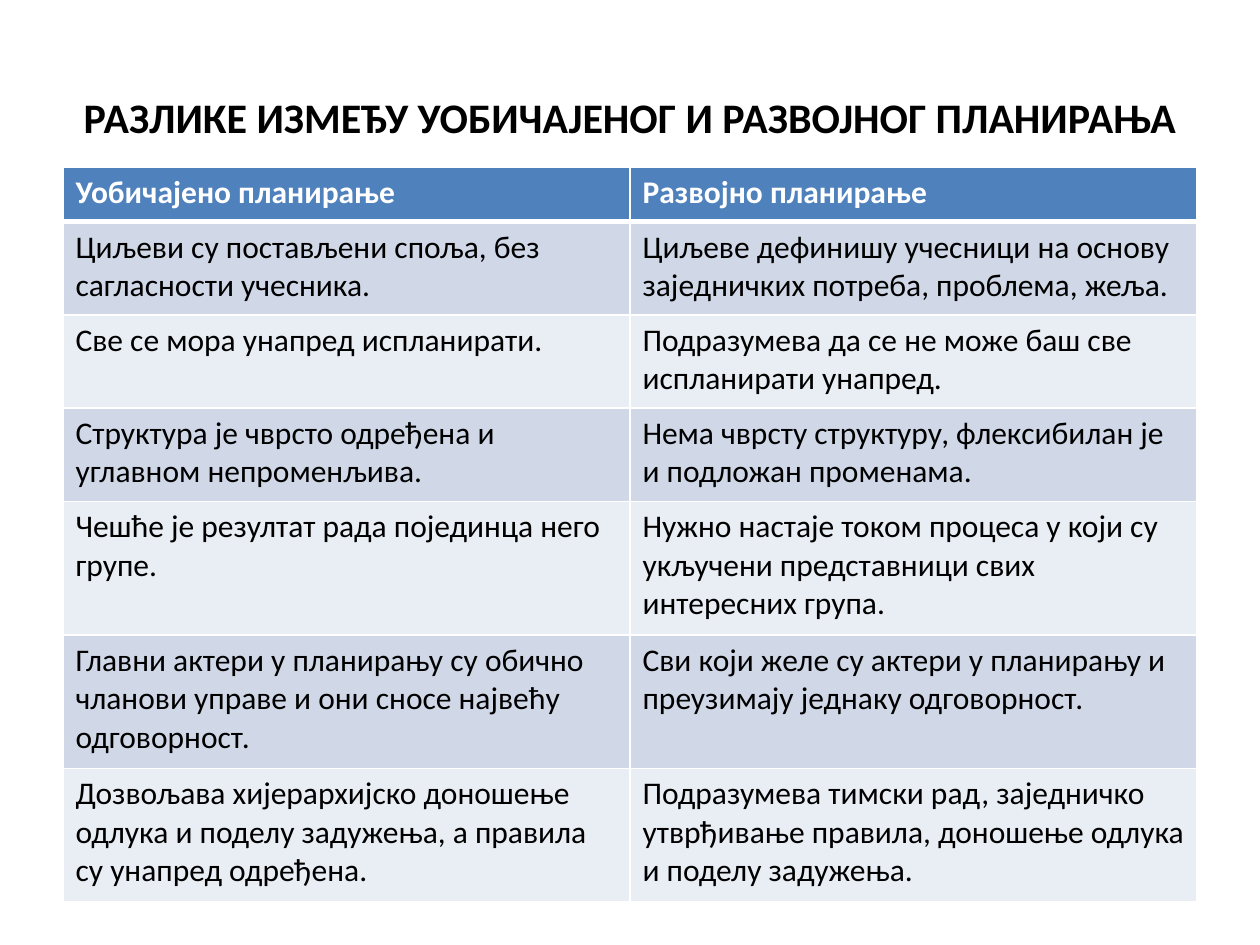
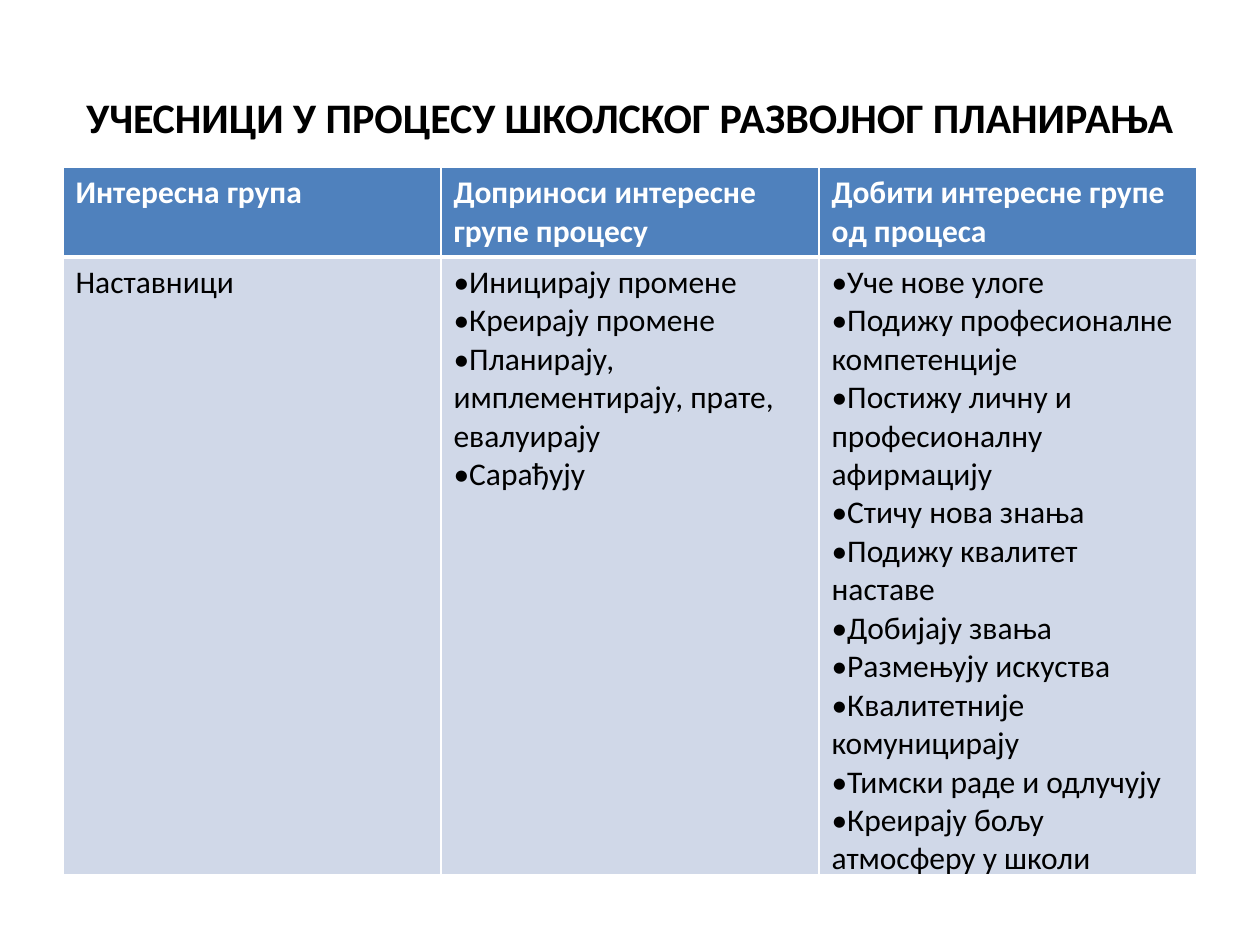
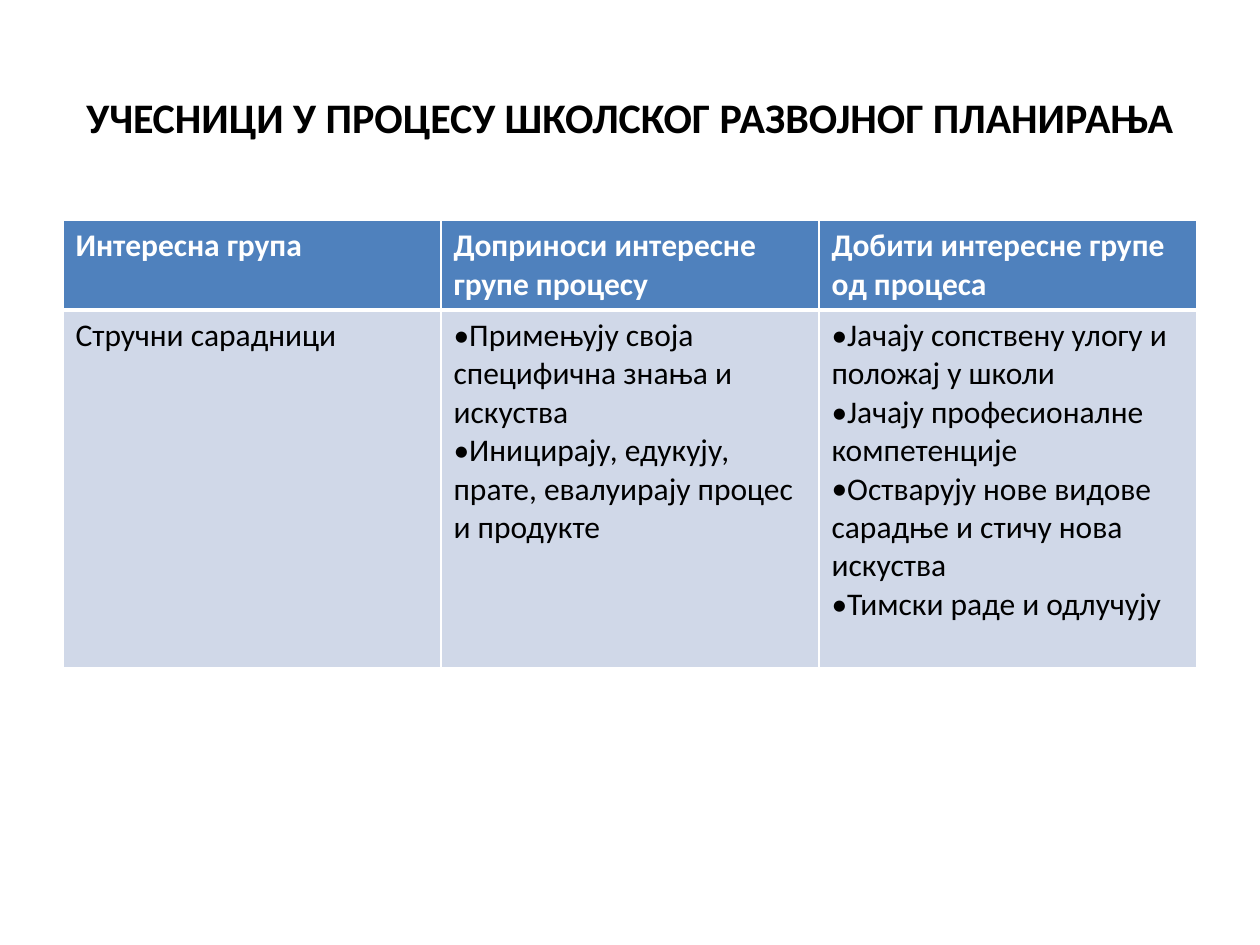
"""Build three slides that compare planning styles and list the participants."""
from dataclasses import dataclass

from lxml import etree
from pptx import Presentation, util as u
from pptx.dml.color import RGBColor
from pptx.enum import text
from pptx.oxml import ns


@dataclass(frozen=True)
class Theme:
    font: str = "Calibri"
    title_size: int = 24
    table_size: int = 18
    ink: str = "000000"
    paper: str = "FFFFFF"
    header: str = "4F81BD"
    bands: tuple = ("D0D8E8", "E9EDF4")
    thin: int = 1
    thick: int = 3


class Deck:
    def __init__(self, theme):
        self.theme = theme
        self.presentation = Presentation()
        self.presentation.slide_width = u.Inches(10)
        self.presentation.slide_height = u.Inches(7.5)
        self.slide = None

    def add_slide(self, title):
        layout = self.presentation.slide_layouts[6]
        self.slide = self.presentation.slides.add_slide(layout)
        self.add_title(title)

    def add_title(self, title):
        box = self.slide.shapes.add_textbox(
            u.Inches(0.5), u.Inches(0.3), u.Inches(9), u.Inches(1.25))
        frame = box.text_frame
        frame.word_wrap = True
        frame.vertical_anchor = text.MSO_ANCHOR.MIDDLE
        paragraph = frame.paragraphs[0]
        paragraph.alignment = text.PP_ALIGN.CENTER
        self.add_run(paragraph, title, self.theme.title_size, self.theme.ink, True)

    def add_run(self, paragraph, content, size, color, bold):
        run = paragraph.add_run()
        run.text = content
        values = {"name": self.theme.font, "size": u.Pt(size), "bold": bold}
        for name, value in values.items():
            setattr(run.font, name, value)
        run.font.color.rgb = RGBColor.from_string(color)

    def add_table(self, top, row_heights, rows):
        width = u.Inches(9)
        column_count = len(rows[0])
        frame = self.slide.shapes.add_table(
            len(rows), column_count, u.Inches(0.5), u.Inches(top),
            width, u.Inches(sum(row_heights)))
        table = frame.table
        for column in table.columns:
            column.width = width // column_count
        for row_index, (height, contents) in enumerate(zip(row_heights, rows)):
            table.rows[row_index].height = u.Inches(height)
            for column_index, content in enumerate(contents):
                self.fill_cell(table.cell(row_index, column_index), row_index, content)

    def fill_cell(self, cell, row_index, content):
        theme = self.theme
        is_header = row_index == 0
        self.add_borders(cell, {
            "lnL": theme.thin,
            "lnR": theme.thin,
            "lnT": theme.thick if row_index == 1 else theme.thin,
            "lnB": theme.thick if is_header else theme.thin,
        })
        cell.fill.solid()
        band = theme.bands[(row_index - 1) % len(theme.bands)]
        cell.fill.fore_color.rgb = RGBColor.from_string(theme.header if is_header else band)
        is_list = isinstance(content, list)
        for index, line in enumerate(content if is_list else [content]):
            frame = cell.text_frame
            paragraph = frame.add_paragraph() if index else frame.paragraphs[0]
            if is_list:
                self.add_bullet(paragraph)
            color = theme.paper if is_header else theme.ink
            self.add_run(paragraph, line, theme.table_size, color, is_header)

    def add_borders(self, cell, widths):
        properties = cell._tc.get_or_add_tcPr()
        for side, width in widths.items():
            line = etree.SubElement(properties, ns.qn(f"a:{side}"), w=str(u.Pt(width)))
            fill = etree.SubElement(line, ns.qn("a:solidFill"))
            etree.SubElement(fill, ns.qn("a:srgbClr"), val=self.theme.paper)

    def add_bullet(self, paragraph):
        properties = paragraph._p.get_or_add_pPr()
        etree.SubElement(properties, ns.qn("a:buFont"), typeface=self.theme.font)
        etree.SubElement(properties, ns.qn("a:buChar"), char="•")


COMPARISON = [
    ("Уобичајено планирање", "Развојно планирање"),
    ("Циљеви су постављени споља, без сагласности учесника.",
     "Циљеве дефинишу учесници на основу заједничких потреба, проблема, жеља."),
    ("Све се мора унапред испланирати.",
     "Подразумева да се не може баш све испланирати унапред."),
    ("Структура је чврсто одређена и углавном непроменљива.",
     "Нема чврсту структуру, флексибилан је и подложан променама."),
    ("Чешће је резултат рада појединца него групе.",
     "Нужно настаје током процеса у који су укључени представници свих "
     "интересних група."),
    ("Главни актери у планирању су обично чланови управе и они сносе највећу "
     "одговорност.",
     "Сви који желе су актери у планирању и преузимају једнаку одговорност."),
    ("Дозвољава хијерархијско доношење одлука и поделу задужења, а правила су "
     "унапред одређена.",
     "Подразумева тимски рад, заједничко утврђивање правила, доношење одлука и "
     "поделу задужења."),
]

PARTICIPANTS_TITLE = "УЧЕСНИЦИ У ПРОЦЕСУ ШКОЛСКОГ РАЗВОЈНОГ ПЛАНИРАЊА"
PARTICIPANTS_HEADER = (
    "Интересна група",
    "Доприноси интересне групе процесу",
    "Добити интересне групе од процеса",
)
TEACHERS = (
    "Наставници",
    ["Иницирају промене",
     "Креирају промене",
     "Планирају, имплементирају, прате, евалуирају",
     "Сарађују"],
    ["Уче нове улоге",
     "Подижу професионалне компетенције",
     "Постижу личну и професионалну афирмацију",
     "Стичу нова знања",
     "Подижу квалитет наставе",
     "Добијају звања",
     "Размењују искуства",
     "Квалитетније комуницирају",
     "Тимски раде и одлучују",
     "Креирају бољу атмосферу у школи"],
)
ASSOCIATES = (
    "Стручни сарадници",
    ["Примењују своја специфична знања и искуства",
     "Иницирају, едукују, прате, евалуирају процес и продукте"],
    ["Јачају сопствену улогу и положај у школи",
     "Јачају професионалне компетенције",
     "Остварују нове видове сарадње и стичу нова искуства",
     "Тимски раде и одлучују"],
)


def main():
    deck = Deck(Theme())
    deck.add_slide("РАЗЛИКЕ ИЗМЕЂУ УОБИЧАЈЕНОГ И РАЗВОЈНОГ ПЛАНИРАЊА")
    deck.add_table(1.33, [0.43] + [0.74] * 3 + [1.06] * 3, COMPARISON)
    for group, top, body_height in ((TEACHERS, 1.33, 4.8), (ASSOCIATES, 1.75, 2.84)):
        deck.add_slide(PARTICIPANTS_TITLE)
        deck.add_table(top, [0.71, body_height], [PARTICIPANTS_HEADER, group])
    deck.presentation.save("out.pptx")


if __name__ == "__main__":
    main()
